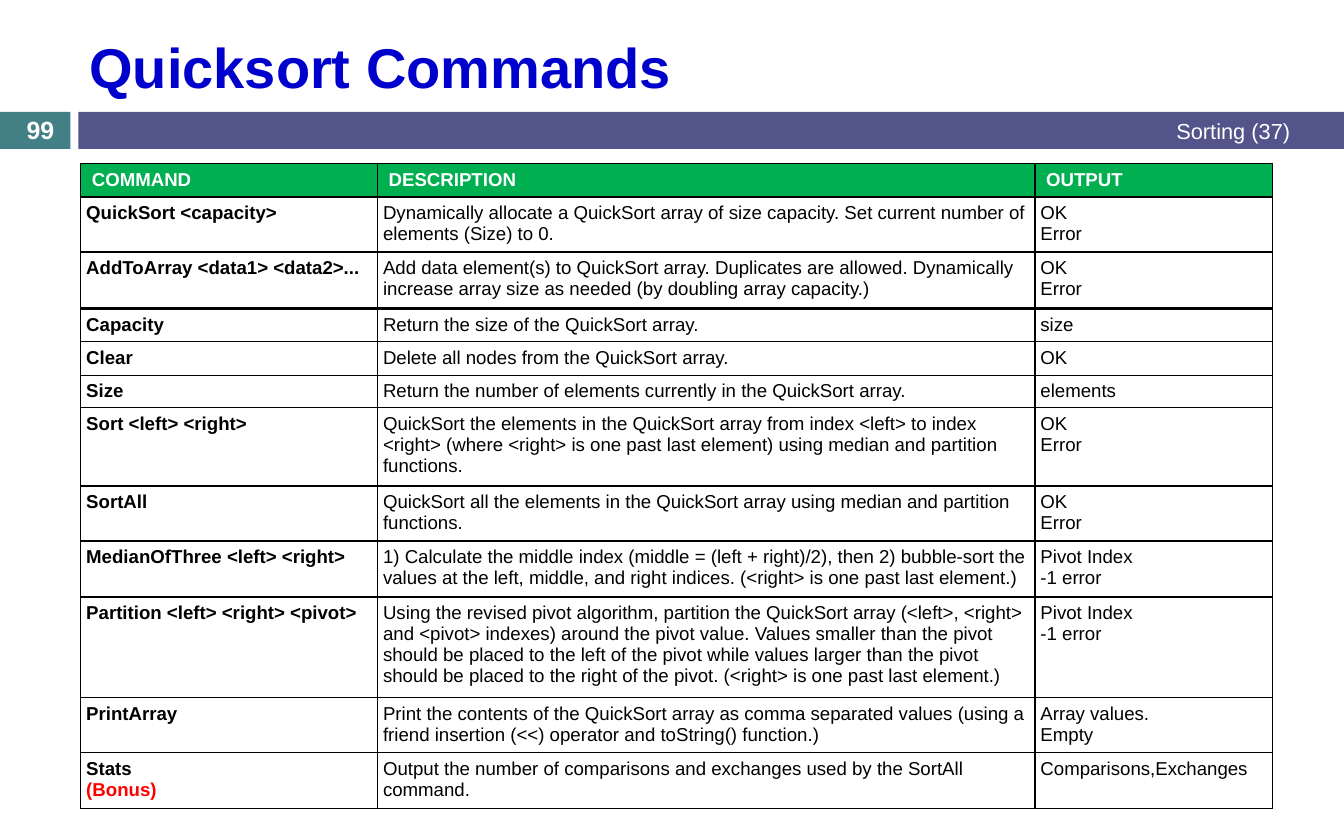
from dataclasses import dataclass

from lxml import etree
from pptx import Presentation
from pptx.dml.color import RGBColor
from pptx.enum.shapes import MSO_SHAPE
from pptx.enum.text import MSO_ANCHOR, PP_ALIGN
from pptx.oxml.ns import qn
from pptx.slide import Slide
from pptx.util import Inches, Pt

RECTANGLE = MSO_SHAPE.RECTANGLE
TOP, MIDDLE = MSO_ANCHOR.TOP, MSO_ANCHOR.MIDDLE
LEFT, CENTER, RIGHT = PP_ALIGN.LEFT, PP_ALIGN.CENTER, PP_ALIGN.RIGHT

BLACK = RGBColor(0, 0, 0)
WHITE = RGBColor(0xFF, 0xFF, 0xFF)
RED = RGBColor(0xFF, 0, 0)
BLUE = RGBColor(0, 0, 0xCC)
GREEN = RGBColor(0, 0xB0, 0x50)
TEAL = RGBColor(0x43, 0x80, 0x86)
PURPLE = RGBColor(0x53, 0x54, 0x8A)

TABLE_LEFT = 0.72
COLUMN_WIDTHS = (2.65, 5.87, 2.12)
HEADER_HEIGHT = 0.28
LINE_HEIGHT = 0.18
CELL_MARGIN = 0.05

HEADERS = ("COMMAND", "DESCRIPTION", "OUTPUT")
COMMANDS = [
    (1.46, 2, "QuickSort <capacity>",
     "Dynamically allocate a QuickSort array of size capacity. "
     "Set current number of elements (Size) to 0.",
     "OK\nError"),
    (2.25, 2, "AddToArray <data1> <data2>...",
     "Add data element(s) to QuickSort array. Duplicates are allowed. "
     "Dynamically increase array size as needed (by doubling array capacity.)",
     "OK\nError"),
    (2.76, 1, "Capacity", "Return the size of the QuickSort array.", "size"),
    (3.05, 1, "Clear", "Delete all nodes from the QuickSort array.", "OK"),
    (3.35, 1, "Size",
     "Return the number of elements currently in the QuickSort array.",
     "elements"),
    (3.64, 3, "Sort <left> <right>",
     "QuickSort the elements in the QuickSort array from index <left> to index "
     "<right> (where <right> is one past last element) using median and "
     "partition functions.",
     "OK\nError"),
    (4.34, 2, "SortAll",
     "QuickSort all the elements in the QuickSort array using median and "
     "partition functions.",
     "OK\nError"),
    (4.83, 2, "MedianOfThree <left> <right>",
     "1) Calculate the middle index (middle = (left + right)/2), then "
     "2) bubble-sort the values at the left, middle, and right indices. "
     "(<right> is one past last element.)",
     "Pivot Index\n-1 error"),
    (5.33, 4, "Partition <left> <right> <pivot>",
     "Using the revised pivot algorithm, partition the QuickSort array "
     "(<left>, <right> and <pivot> indexes) around the pivot value. Values "
     "smaller than the pivot should be placed to the left of the pivot while "
     "values larger than the pivot should be placed to the right of the pivot. "
     "(<right> is one past last element.)",
     "Pivot Index\n-1 error"),
    (6.23, 2, "PrintArray",
     "Print the contents of the QuickSort array as comma separated values "
     "(using a friend insertion (<<) operator and toString() function.)",
     "Array values.\nEmpty"),
    (6.72, 2, "Stats\n(Bonus)",
     "Output the number of comparisons and exchanges used by the SortAll command.",
     "Comparisons,Exchanges"),
]


@dataclass
class SlideBuilder:
    slide: Slide
    font: str = "Arial"
    table_size: int = 12

    def add_runs(self, frame, text, size, color, bold=False, align=LEFT):
        for index, line in enumerate(text.split("\n")):
            paragraph = frame.add_paragraph() if index else frame.paragraphs[0]
            paragraph.alignment = align
            run = paragraph.add_run()
            run.text = line
            run.font.name = self.font
            run.font.size = Pt(size)
            run.font.bold = bold
            run.font.color.rgb = RED if line == "(Bonus)" else color

    def bar(self, left, top, width, height, color):
        shape = self.slide.shapes.add_shape(
            RECTANGLE, Inches(left), Inches(top), Inches(width), Inches(height))
        shape.shadow.inherit = False
        shape.fill.solid()
        shape.fill.fore_color.rgb = color
        shape.line.fill.background()

    def text(self, left, top, width, height, text, size, color, bold=False, align=LEFT):
        box = self.slide.shapes.add_textbox(
            Inches(left), Inches(top), Inches(width), Inches(height))
        frame = box.text_frame
        frame.word_wrap = True
        frame.vertical_anchor = MIDDLE
        self.add_runs(frame, text, size, color, bold, align)

    def cell(self, cell, text, fill, color, bold, anchor, side_margin):
        cell.margin_left = cell.margin_right = Inches(side_margin)
        cell.margin_top = cell.margin_bottom = Inches(CELL_MARGIN)
        cell.vertical_anchor = anchor
        self.add_runs(cell.text_frame, text, self.table_size, color, bold)
        properties = cell._tc.get_or_add_tcPr()
        for side in ("a:lnL", "a:lnR", "a:lnT", "a:lnB"):
            border = etree.SubElement(properties, qn(side), w=str(Pt(1)))
            solid = etree.SubElement(border, qn("a:solidFill"))
            etree.SubElement(solid, qn("a:srgbClr"), val=str(BLACK))
        cell.fill.solid()
        cell.fill.fore_color.rgb = fill

    def table(self, top, lines, values, headers=()):
        heights = [lines * LINE_HEIGHT + 2 * CELL_MARGIN]
        if headers:
            heights.insert(0, HEADER_HEIGHT)
        table = self.slide.shapes.add_table(
            len(heights), len(COLUMN_WIDTHS), Inches(TABLE_LEFT), Inches(top),
            Inches(sum(COLUMN_WIDTHS)), Inches(sum(heights))).table
        table.first_row = bool(headers)
        table.horz_banding = False
        for column, width in zip(table.columns, COLUMN_WIDTHS):
            column.width = Inches(width)
        for row, height in zip(table.rows, heights):
            row.height = Inches(height)
        for index, header in enumerate(headers):
            self.cell(table.cell(0, index), header, GREEN, WHITE, True, MIDDLE, 0.1)
        for index, value in enumerate(values):
            self.cell(table.cell(len(heights) - 1, index), value, WHITE, BLACK,
                      index == 0, TOP, CELL_MARGIN)


def main():
    presentation = Presentation()
    presentation.slide_width = Inches(12)
    presentation.slide_height = Inches(7.5)
    builder = SlideBuilder(presentation.slides.add_slide(presentation.slide_layouts[6]))

    builder.bar(0, 1, 0.63, 0.33, TEAL)
    builder.bar(0.7, 1, 11.3, 0.33, PURPLE)
    builder.text(0.7, 0.19, 10.91, 0.8, "Quicksort Commands", 36, BLUE, bold=True)
    builder.text(6.17, 1, 5.45, 0.33, "Sorting (37)", 14, WHITE, align=RIGHT)
    builder.text(0, 1.01, 0.72, 0.3, "99", 16, WHITE, bold=True, align=CENTER)
    for index, (top, lines, *values) in enumerate(COMMANDS):
        builder.table(top, lines, values, () if index else HEADERS)

    presentation.save("out.pptx")


if __name__ == "__main__":
    main()
